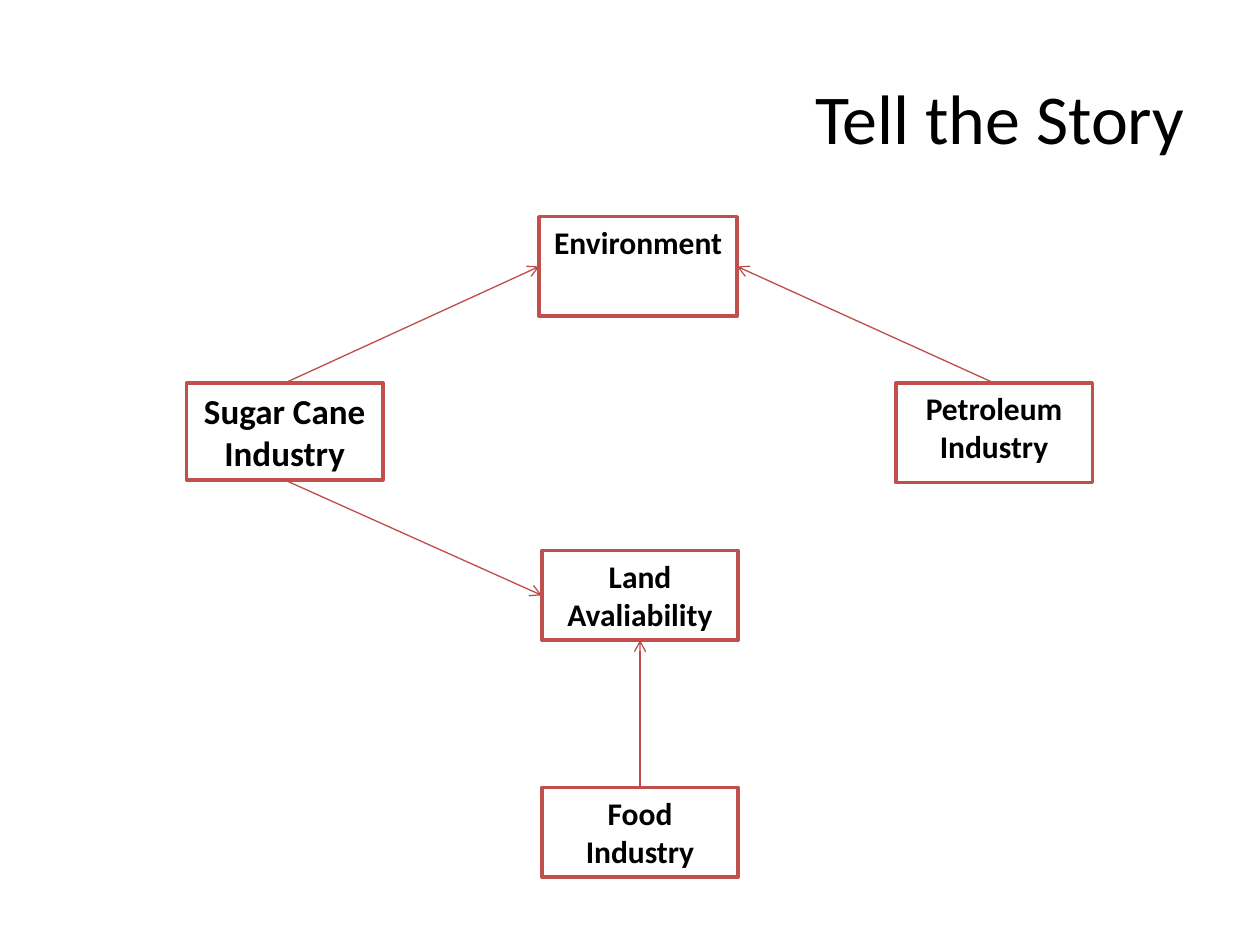
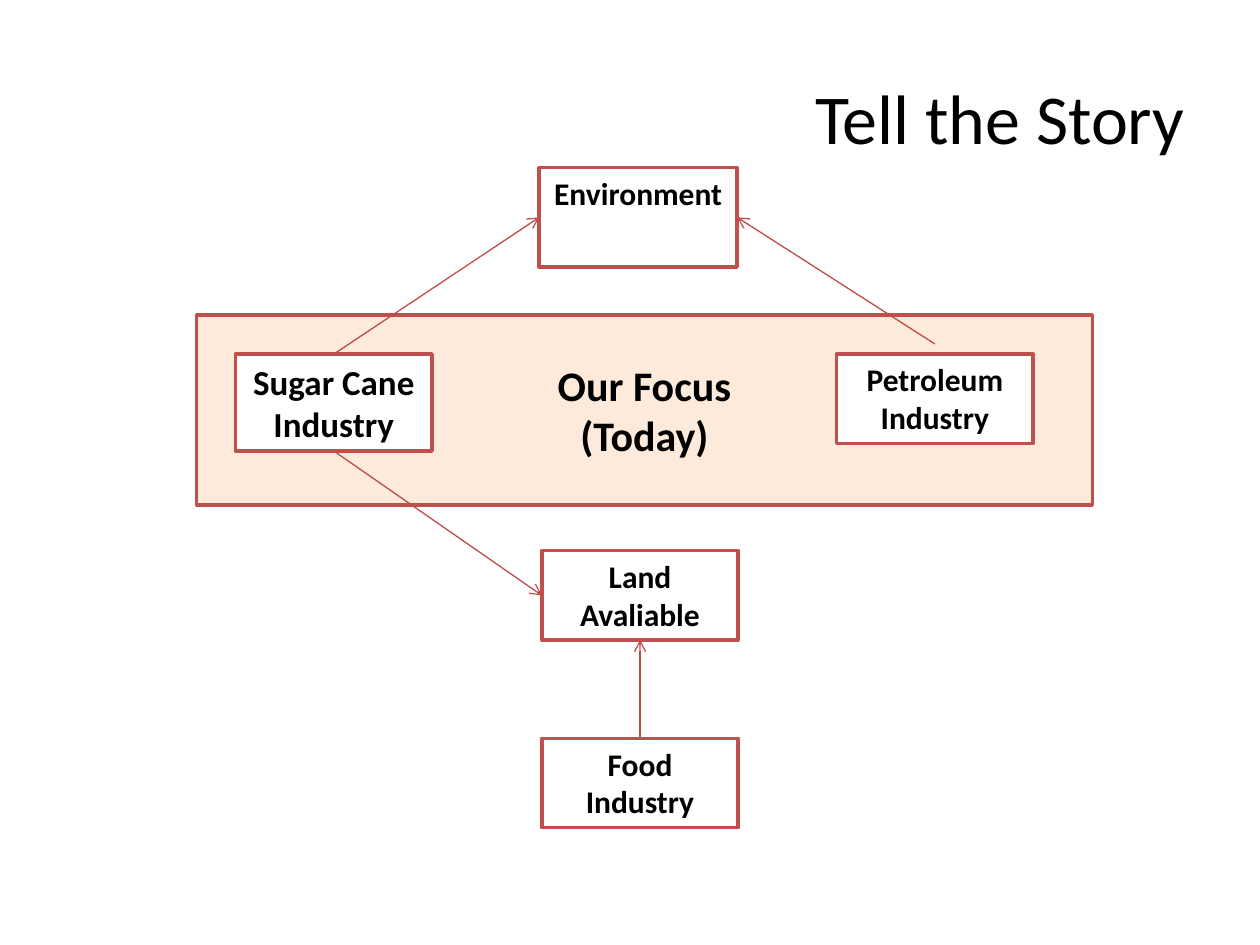
from lxml import etree
from pptx import Presentation
from pptx.dml.color import RGBColor as RGB
from pptx.enum.shapes import MSO_CONNECTOR as Link, MSO_SHAPE as Shape
from pptx.enum.text import MSO_ANCHOR as Anchor, PP_ALIGN as Align
from pptx.oxml.ns import qn
from pptx.util import Inches, Pt

COLORS = {"ink": "000000", "paper": "FFFFFF", "edge": "C0504D",
          "arrow": "BF4C48", "focus": "FDEADA"}
FONT = "Calibri"
TOP, LEFT, BOTTOM, RIGHT = range(4)  # connection sites


def color(name):
    return RGB.from_string(COLORS[name])


def write(frame, text, size=18, bold=True, align=Align.CENTER,
          anchor=Anchor.TOP, inset=0.05):
    frame.word_wrap = True
    frame.vertical_anchor = anchor
    frame.margin_top = Inches(inset)
    frame.text = text
    for para in frame.paragraphs:
        para.alignment = align
        font = para.font
        font.name, font.size, font.bold = FONT, Pt(size), bold
        font.color.rgb = color("ink")


def add_title(slide, text):
    box = slide.shapes.add_textbox(Inches(0.5), Inches(0.3),
                                   Inches(9), Inches(1.25))
    write(box.text_frame, text, size=40, bold=False,
          align=Align.RIGHT, anchor=Anchor.MIDDLE)


def add_box(slide, text, x, y, w=1.56, h=0.71, fill="paper", **style):
    box = slide.shapes.add_shape(Shape.RECTANGLE, Inches(x), Inches(y),
                                 Inches(w), Inches(h))
    box.shadow.inherit = False
    box.fill.solid()
    box.fill.fore_color.rgb = color(fill)
    box.line.color.rgb = color("edge")
    box.line.width = Pt(2)
    write(box.text_frame, text, **style)
    return box


def add_arrow(slide, end, site, start=None, side=TOP, point=(0, 0)):
    """Run an arrow to a box side, from another box side or a free point."""
    x, y = map(Inches, point)
    line = slide.shapes.add_connector(Link.STRAIGHT, x, y, x, y)
    if start is not None:
        line.begin_connect(start, side)
    line.end_connect(end, site)
    line.line.color.rgb = color("arrow")
    line.line.width = Pt(0.75)
    props = line._element.spPr
    etree.SubElement(props.find(qn("a:ln")), qn("a:tailEnd"), type="arrow")
    etree.SubElement(props, qn("a:effectLst"))


def add_story(deck, env_y, cane, oil, land, food_y, oil_h=0.71,
              oil_start=None, focus=False):
    slide = deck.slides.add_slide(deck.slide_layouts[6])
    if focus:
        add_box(slide, "Our Focus\n(Today)", 1.56, 2.5, 7.11, 1.51,
                fill="focus", size=24, inset=0.35)
    add_title(slide, "Tell the Story")

    # Boxes
    sugar = add_box(slide, "Sugar Cane Industry", *cane, h=0.77, size=20)
    fuel = add_box(slide, "Petroleum Industry", *oil, h=oil_h)
    field = add_box(slide, land, 4.3, 4.37)
    food = add_box(slide, "Food Industry", 4.3, food_y)
    env = add_box(slide, "Environment", 4.28, env_y, w=1.57, h=0.79)

    # Arrows
    add_arrow(slide, field, LEFT, sugar, BOTTOM)
    add_arrow(slide, field, BOTTOM, food)
    add_arrow(slide, env, LEFT, sugar)
    if oil_start:
        add_arrow(slide, env, RIGHT, point=oil_start)
    else:
        add_arrow(slide, env, RIGHT, fuel)


def main():
    deck = Presentation()
    deck.slide_width, deck.slide_height = Inches(10), Inches(7.5)
    # The whole story
    add_story(deck, 1.72, (1.48, 3.04), (7.11, 3.04), "Land Avaliability",
              6.25, oil_h=0.79)
    # The part in focus
    add_story(deck, 1.33, (1.87, 2.81), (6.64, 2.81), "Land Avaliable",
              5.86, oil_start=(7.42, 2.73), focus=True)
    deck.save("out.pptx")


if __name__ == "__main__":
    main()
